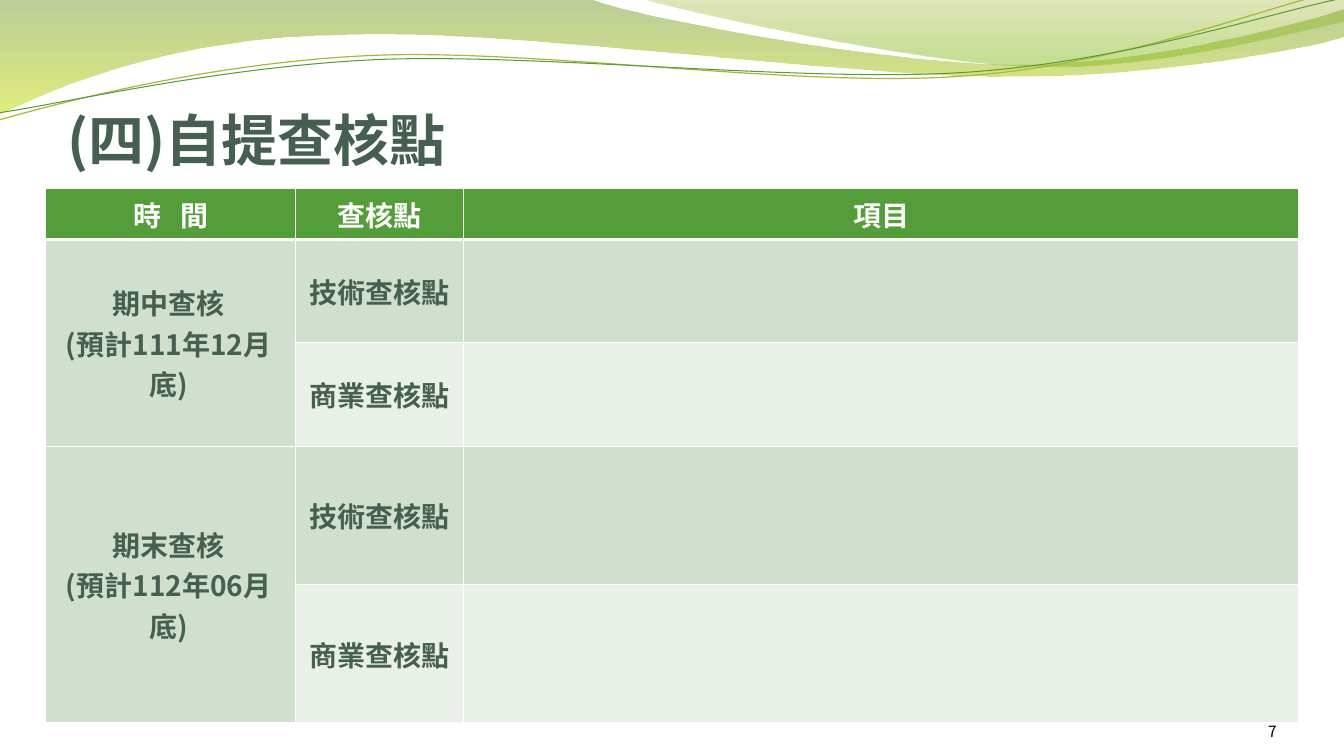
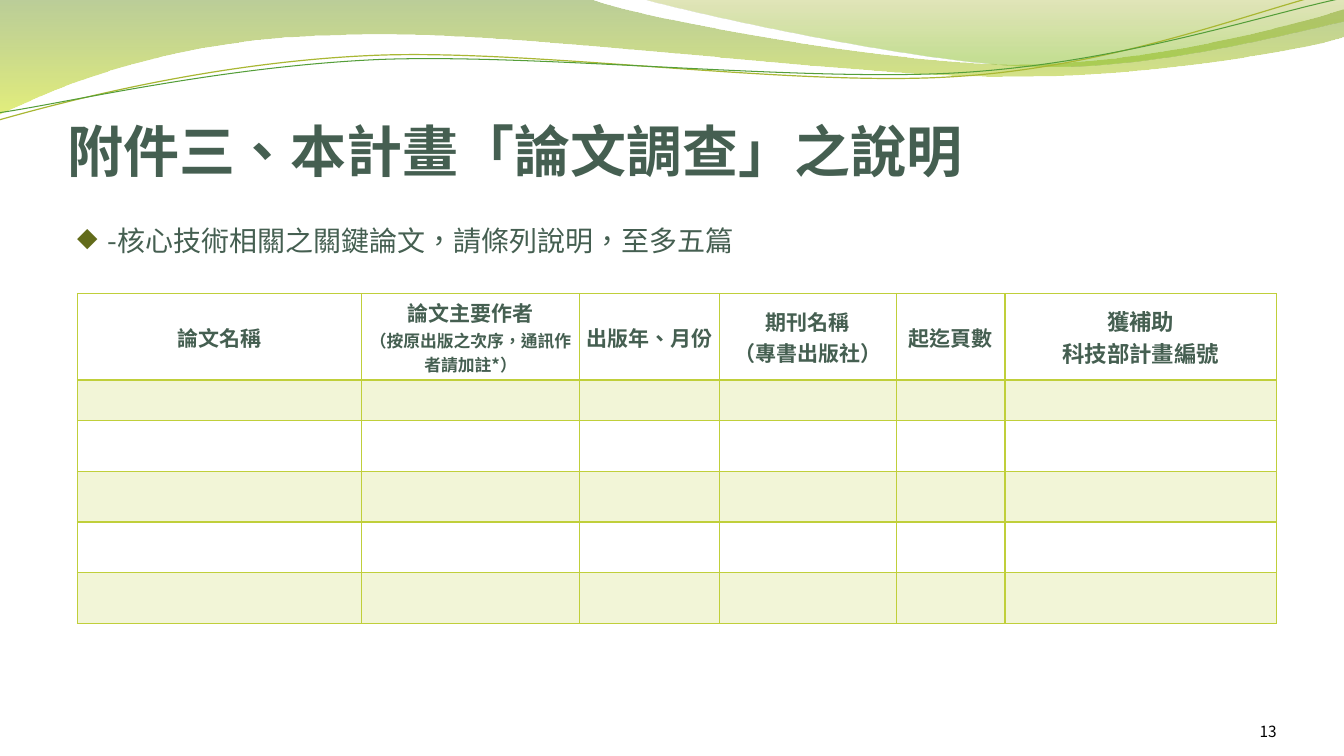
from dataclasses import dataclass

from pptx import Presentation
from pptx.dml.color import RGBColor
from pptx.enum.text import MSO_ANCHOR, PP_ALIGN
from pptx.oxml import parse_xml
from pptx.oxml.ns import nsdecls, qn
from pptx.util import Pt


@dataclass(frozen=True)
class Theme:
    sans: str = "Noto Sans CJK SC"
    sans_tc: str = "Noto Sans CJK TC"
    ink: str = "455F51"
    white: str = "FFFFFF"
    black: str = "000000"
    green: str = "549E39"
    sage: str = "D1DFCE"
    mist: str = "E9F0E8"
    lime: str = "C0CF3A"
    olive: str = "626B1A"
    wave: str = "A9B733"
    title_size: float = 40
    body_size: float = 20
    column_size: float = 15
    wide_column_size: float = 16
    note_size: float = 12
    number_size: float = 11


THEME = Theme()
WIDTH, HEIGHT = 960, 540

# Outlines in points: a pair is a corner, six numbers are a Bézier curve.
# Gradient stops: position, colour, opacity in percent.
BANDS = [
    ([(-1, -0.3), (422.6, -0.3), (456.5, 12.6, 636.5, 45.7, 727.9, 45.7),
      (818.6, 45.7, 919.4, 19, 959.8, 6.8), (960.5, 26.2),
      (943.9, 32, 834.5, 55, 715.7, 54.3),
      (596.9, 54.3, 366.5, 20.5, 247, 24.8),
      (123.8, 26.2, 43.9, 60.1, -1.4, 81.6)],
     [(0, "69921C", 45), (1, "CCE10F", 55)]),
    ([(459.4, -0.4), (488.9, 8, 654.5, 44.8, 738, 47),
      (820.8, 49.8, 923, 23.2, 959.8, 15.2), (959.8, 0)],
     [(0, "9BAA1A", 30), (0.8, "81BA16", 45)]),
]
WAVE_ROTATION = 357.3
WAVES = [
    ([(-2.3, 63.1), (44.4, 52.2, 151.4, 29.2, 266, 29.6),
      (379.8, 29.9, 567, 66.8, 682.4, 64.3),
      (798.6, 62.6, 901.9, 25.7, 959.4, 15.4)], THEME.wave, 0.85),
    ([(-2, 57.9), (43.6, 53.6, 157.1, 32.3, 271.6, 32.7),
      (386.9, 33.8, 572.2, 63.4, 686.9, 61.6),
      (801.6, 59.8, 904.7, 30.1, 961.3, 21.2)], THEME.green, 0.75),
]

CHECK_TITLE = [("(四)自提查核點", THEME.sans)]
CHECK_HEADER = ["時 間", "查核點", "項目"]
CHECK_STAGES = [
    ["期中查核", "(預計111年12月底)"],
    ["期末查核", "(預計112年06月底)"],
]
CHECK_KINDS = ["技術查核點", "商業查核點"]
CHECK_WIDTHS = [178.5, 120, 596.5]
CHECK_HEIGHTS = [36.2, 73.9, 73.9, 98.8, 98.8]

PAPER_TITLE = [("附件三、", THEME.sans_tc), ("本計畫「論文調查」之說明", THEME.sans)]
PAPER_NOTE = "-核心技術相關之關鍵論文，請條列說明，至多五篇"
PAPER_COLUMNS = [
    (203, [("論文名稱", THEME.column_size)]),
    (155.5, [("論文主要作者", THEME.column_size),
             ("（按原出版之次序，通訊作者請加註*）", THEME.note_size)]),
    (100, [("出版年、月份", THEME.column_size)]),
    (126.5, [("期刊名稱", THEME.column_size), ("（專書出版社）", THEME.column_size)]),
    (77.5, [("起迄頁數", THEME.column_size)]),
    (194, [("獲補助", THEME.wide_column_size),
           ("科技部計畫編號", THEME.wide_column_size)]),
]
PAPER_HEIGHTS = [61.7, 29] + [36.2] * 4


def rgb(color):
    return RGBColor.from_string(color)


def set_font(font, size, color, bold=False, name=THEME.sans):
    """Style a paragraph or run font, for Latin and East Asian text alike."""
    font.size, font.bold, font.name = Pt(size), bold, name
    font.color.rgb = rgb(color)
    rpr = font._rPr
    rpr.set("lang", "zh-TW")
    rpr.find(qn("a:latin")).addnext(
        parse_xml(f'<a:ea {nsdecls("a")} typeface="{name}"/>'))


def set_alphas(element, alphas):
    """Give the element's RGB colours, in order, these opacities in percent."""
    for clr, alpha in zip(element.iter(qn("a:srgbClr")), alphas):
        clr.append(parse_xml(f'<a:alpha {nsdecls("a")} val="{alpha * 1000}"/>'))


def add_outline(slide, outline, close):
    """Draw the corners and curves as one freeform with true Bézier segments."""
    start, *rest = [(Pt(part[i]), Pt(part[i + 1]))
                    for part in outline for i in range(0, len(part), 2)]
    builder = slide.shapes.build_freeform(*start)
    builder.add_line_segments(rest, close=close)
    sp = builder.convert_to_shape()
    sp.shadow.inherit = False
    lines = iter(list(sp._element.iter(qn("a:lnTo"))))
    for part in outline[1:]:
        line = next(lines)
        if len(part) == 6:
            curve = parse_xml(f'<a:cubicBezTo {nsdecls("a")}/>')
            line.addprevious(curve)
            for knot in (line, next(lines), next(lines)):
                curve.append(knot[0])
                knot.getparent().remove(knot)
    return sp


def add_waves(slide):
    for outline, stops in BANDS:
        sp = add_outline(slide, outline, close=True)
        sp.fill.gradient()
        sp.fill.gradient_angle = 270
        for stop, (position, color, _) in zip(sp.fill.gradient_stops, stops):
            stop.position = position
            stop.color.rgb = rgb(color)
        set_alphas(sp._element, [alpha for _, _, alpha in stops])
        sp.line.fill.background()
    for outline, color, width in WAVES:
        sp = add_outline(slide, outline, close=False)
        sp.rotation = WAVE_ROTATION
        sp.fill.background()
        sp.line.color.rgb = rgb(color)
        sp.line.width = Pt(width)


def add_text(slide, box, insets, anchor=MSO_ANCHOR.TOP):
    """Add an empty text box and return its first paragraph."""
    tf = slide.shapes.add_textbox(*map(Pt, box)).text_frame
    tf.word_wrap = True
    tf.vertical_anchor = anchor
    tf.margin_left, tf.margin_top, tf.margin_right, tf.margin_bottom = map(Pt, insets)
    return tf.paragraphs[0]


def add_base(prs, title, title_top, number):
    """Add a slide with the waves, the title and the page number."""
    slide = prs.slides.add_slide(prs.slide_layouts[6])
    add_waves(slide)
    p = add_text(slide, (48, title_top, 864, 90), (0, 3.6, 0, 0), MSO_ANCHOR.BOTTOM)
    for text, name in title:
        r = p.add_run()
        r.text = text
        set_font(r.font, THEME.title_size, THEME.ink, True, name)
    p = add_text(slide, (832, 500.4, 80, 28.8), (0, 0, 0, 0), MSO_ANCHOR.BOTTOM)
    p.text = number
    p.alignment = PP_ALIGN.RIGHT
    set_font(p.font, THEME.number_size, THEME.black, name=THEME.sans_tc)
    return slide


def set_borders(cell, color, bottom):
    """Draw hairlines on three sides and the given width below."""
    tcpr = cell._tc.get_or_add_tcPr()
    for i, (side, width) in enumerate(zip("LRTB", (1, 1, 1, bottom))):
        tcpr.insert(i, parse_xml(
            f'<a:ln{side} {nsdecls("a")} w="{Pt(width)}"><a:solidFill>'
            f'<a:srgbClr val="{color}"/></a:solidFill></a:ln{side}>'))


def add_grid(slide, left, top, widths, heights, texts, fills,
             header_color, border, header_rule):
    """texts maps (row, column) to (text, size) lines; fills holds (colour, opacity)."""
    frame = slide.shapes.add_table(
        len(heights), len(widths), Pt(left), Pt(top),
        Pt(sum(widths)), Pt(sum(heights)))
    table = frame.table
    table.horz_banding = False
    for column, width in zip(table.columns, widths):
        column.width = Pt(width)
    for row_no, (row, height, fill) in enumerate(zip(table.rows, heights, fills)):
        row.height = Pt(height)
        for col_no, cell in enumerate(row.cells):
            cell.margin_left = cell.margin_right = Pt(5)
            cell.margin_top = cell.margin_bottom = 0
            cell.vertical_anchor = MSO_ANCHOR.MIDDLE
            if fill:
                color, alpha = fill
                cell.fill.solid()
                cell.fill.fore_color.rgb = rgb(color)
                if alpha < 100:
                    set_alphas(cell._tc, [alpha])
            else:
                cell.fill.background()
            set_borders(cell, border, 1 if row_no else header_rule)
            tf = cell.text_frame
            for i, (text, size) in enumerate(texts.get((row_no, col_no), [])):
                p = tf.paragraphs[0] if i == 0 else tf.add_paragraph()
                p.text = text
                p.alignment = PP_ALIGN.CENTER
                set_font(p.font, size, THEME.ink if row_no else header_color, True)
    return table


def widen_space(p, extra):
    """Split the paragraph into characters and add extra points to its space."""
    text = p.text
    p.clear()
    for char in text:
        r = p.add_run()
        r.text = char
        if char == " ":
            r.font._rPr.set("spc", str(extra * 100))


def add_diamond_bullet(p, indent):
    ppr = p._p.get_or_add_pPr()
    ppr.set("marL", str(Pt(indent)))
    ppr.set("indent", str(-Pt(indent)))
    for tag, content in (
            ("buClr", f'><a:srgbClr val="{THEME.olive}"/></a:buClr>'),
            ("buSzPct", ' val="95000"/>'),
            ("buChar", ' char="◆"/>')):
        bullet = parse_xml(f'<a:{tag} {nsdecls("a")}{content}')
        ppr.insert_element_before(bullet, "a:defRPr")


def build_checkpoints(prs):
    slide = add_base(prs, CHECK_TITLE, 33.4, "7")
    size = THEME.body_size
    texts = {(0, col): [(text, size)] for col, text in enumerate(CHECK_HEADER)}
    stage_rows = range(1, len(CHECK_HEIGHTS), len(CHECK_KINDS))
    for row, lines in zip(stage_rows, CHECK_STAGES):
        texts[row, 0] = [(line, size) for line in lines]
        for i, kind in enumerate(CHECK_KINDS):
            texts[row + i, 1] = [(kind, size)]
    bands = [(THEME.sage, 100), (THEME.mist, 100)] * len(CHECK_STAGES)
    table = add_grid(slide, 32.6, 134.8, CHECK_WIDTHS, CHECK_HEIGHTS, texts,
                     [(THEME.green, 100)] + bands, THEME.white, THEME.white, 3)
    widen_space(table.cell(0, 0).text_frame.paragraphs[0], 9)
    for row in stage_rows:
        stage = table.cell(row, 0)
        stage.margin_right = Pt(7.6)
        stage.merge(table.cell(row + len(CHECK_KINDS) - 1, 0))


def build_papers(prs):
    slide = add_base(prs, PAPER_TITLE, 41, "13")
    p = add_text(slide, (48, 144, 880, 103), (7.2, 3.6, 7.2, 3.6))
    p.text = PAPER_NOTE
    p.line_spacing = 1.5
    p.space_before = Pt(4)
    set_font(p.font, THEME.body_size, THEME.ink)
    add_diamond_bullet(p, 21.6)
    texts = {(0, col): lines for col, (_, lines) in enumerate(PAPER_COLUMNS)}
    fills = [(THEME.lime, 20) if row % 2 else None for row in range(len(PAPER_HEIGHTS))]
    add_grid(slide, 55.4, 209.8, [width for width, _ in PAPER_COLUMNS], PAPER_HEIGHTS,
             texts, fills, THEME.ink, THEME.lime, 2)


def main():
    prs = Presentation()
    prs.slide_width, prs.slide_height = Pt(WIDTH), Pt(HEIGHT)
    build_checkpoints(prs)
    build_papers(prs)
    prs.save("out.pptx")


if __name__ == "__main__":
    main()
